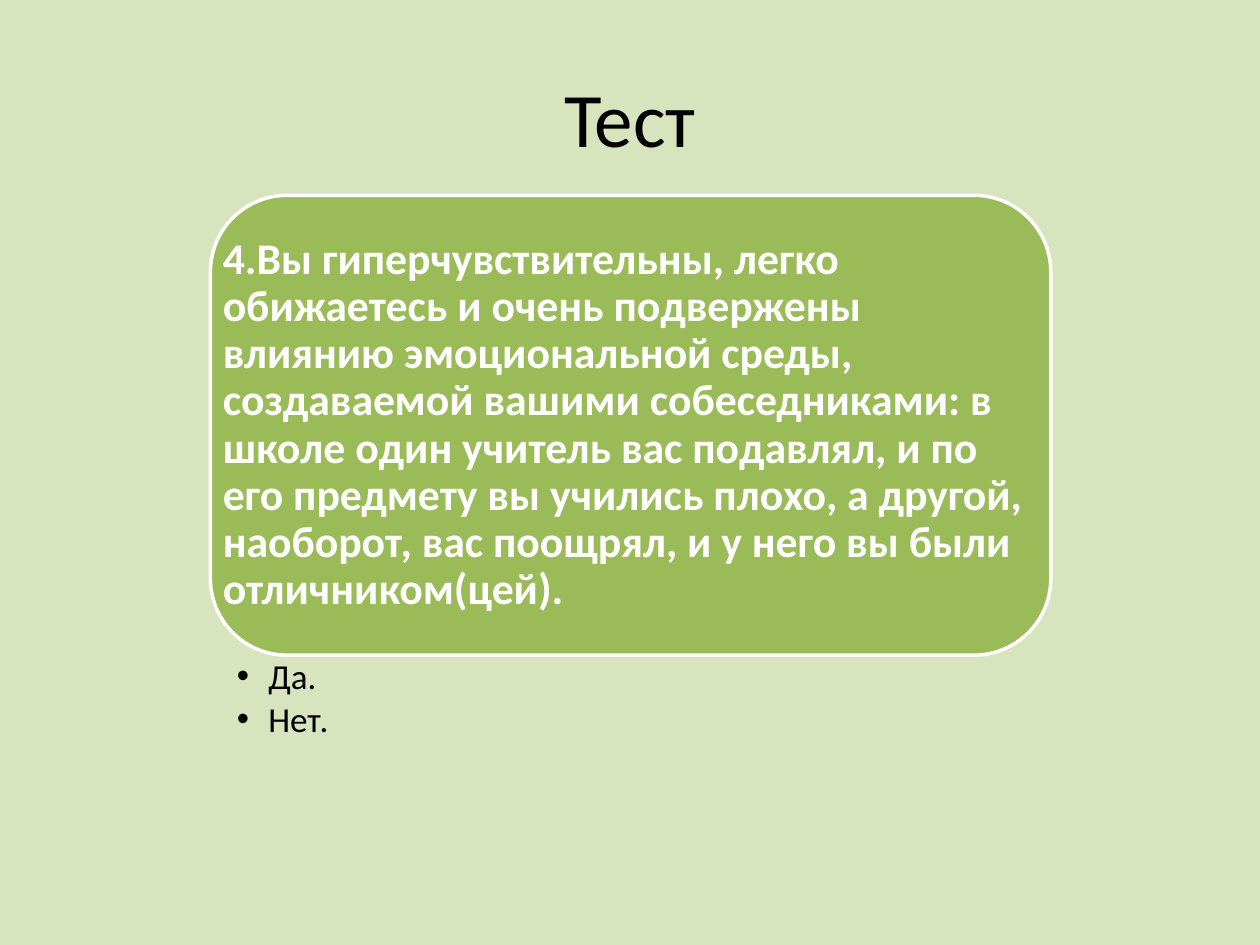
"""Build a quiz slide with one question card and two answers."""
from dataclasses import dataclass

from lxml.etree import SubElement
from pptx import Presentation
from pptx.dml.color import RGBColor
from pptx.enum.shapes import MSO_SHAPE as Shape
from pptx.enum.text import MSO_ANCHOR as Anchor, PP_ALIGN as Align
from pptx.oxml.ns import qn
from pptx.util import Inches, Pt

LEFT, WIDTH = 1.67, 6.67
CARD_TOP, CARD_HEIGHT = 1.55, 3.65
QUESTION = (
    "4.Вы гиперчувствительны, легко обижаетесь и очень подвержены влиянию "
    "эмоциональной среды, создаваемой вашими собеседниками: в школе один "
    "учитель вас подавлял, и по его предмету вы учились плохо, а другой, "
    "наоборот, вас поощрял, и у него вы были отличником(цей)."
)


@dataclass(frozen=True)
class TextBlock:
    """A text box with its paragraphs and their shared style."""

    lines: tuple[str, ...]
    area: tuple[float, float, float, float]
    size: int
    color: str = "000000"
    bold: bool = False
    align: Align = Align.LEFT
    anchor: Anchor = Anchor.MIDDLE
    insets: tuple[float, float, float, float] = (0.1, 0.1, 0.1, 0.1)
    line_spacing: float = 0.9
    space_after: int = 0
    bulleted: bool = False


BLOCKS = (
    TextBlock(("Тест",), (0.5, 0.3, 9, 1.25), 44, align=Align.CENTER,
              line_spacing=1),
    TextBlock((QUESTION,), (LEFT, CARD_TOP, WIDTH, CARD_HEIGHT), 25,
              color="FFFFFF", bold=True),
    TextBlock(("Да.", "Нет."), (LEFT, CARD_TOP + CARD_HEIGHT, WIDTH, 0.75), 20,
              anchor=Anchor.TOP, insets=(0.21, 0.03, 0.19, 0.03),
              space_after=3, bulleted=True),
)


def paint(target, color: str) -> None:
    """Give a fill a solid colour."""
    target.solid()
    target.fore_color.rgb = RGBColor.from_string(color)


def add_bullet(para) -> None:
    """Put a round bullet with a hanging indent before a paragraph."""
    props = para._p.get_or_add_pPr()
    props.set("marL", str(Inches(0.25)))
    props.set("indent", str(Inches(-0.25)))
    SubElement(props, qn("a:buFont"), typeface="Arial")
    SubElement(props, qn("a:buChar"), char="•")


def add_card(page) -> None:
    """Draw the rounded card behind the question."""
    area = map(Inches, (LEFT, CARD_TOP, WIDTH, CARD_HEIGHT))
    card = page.shapes.add_shape(Shape.ROUNDED_RECTANGLE, *area)
    card.shadow.inherit = False
    paint(card.fill, "9BBB59")
    paint(card.line.fill, "FFFFFF")
    card.line.width = Pt(2)


def add_text(page, block: TextBlock) -> None:
    """Draw a text block paragraph by paragraph."""
    frame = page.shapes.add_textbox(*map(Inches, block.area)).text_frame
    frame.word_wrap = True
    frame.vertical_anchor = block.anchor
    (frame.margin_left, frame.margin_top,
     frame.margin_right, frame.margin_bottom) = map(Inches, block.insets)
    for index, line in enumerate(block.lines):
        para = frame.add_paragraph() if index else frame.paragraphs[0]
        para.alignment = block.align
        para.line_spacing = block.line_spacing
        para.space_after = Pt(block.space_after)
        if block.bulleted:
            add_bullet(para)
        span = para.add_run()
        span.text = line
        span.font.name = "Calibri"
        span.font.size = Pt(block.size)
        span.font.bold = block.bold
        paint(span.font.fill, block.color)


def main() -> None:
    """Build and save the deck."""
    deck = Presentation()
    deck.slide_width, deck.slide_height = Inches(10), Inches(7.5)
    page = deck.slides.add_slide(deck.slide_layouts[6])
    paint(page.background.fill, "D7E4BD")
    add_card(page)
    for block in BLOCKS:
        add_text(page, block)
    deck.save("out.pptx")


if __name__ == "__main__":
    main()
